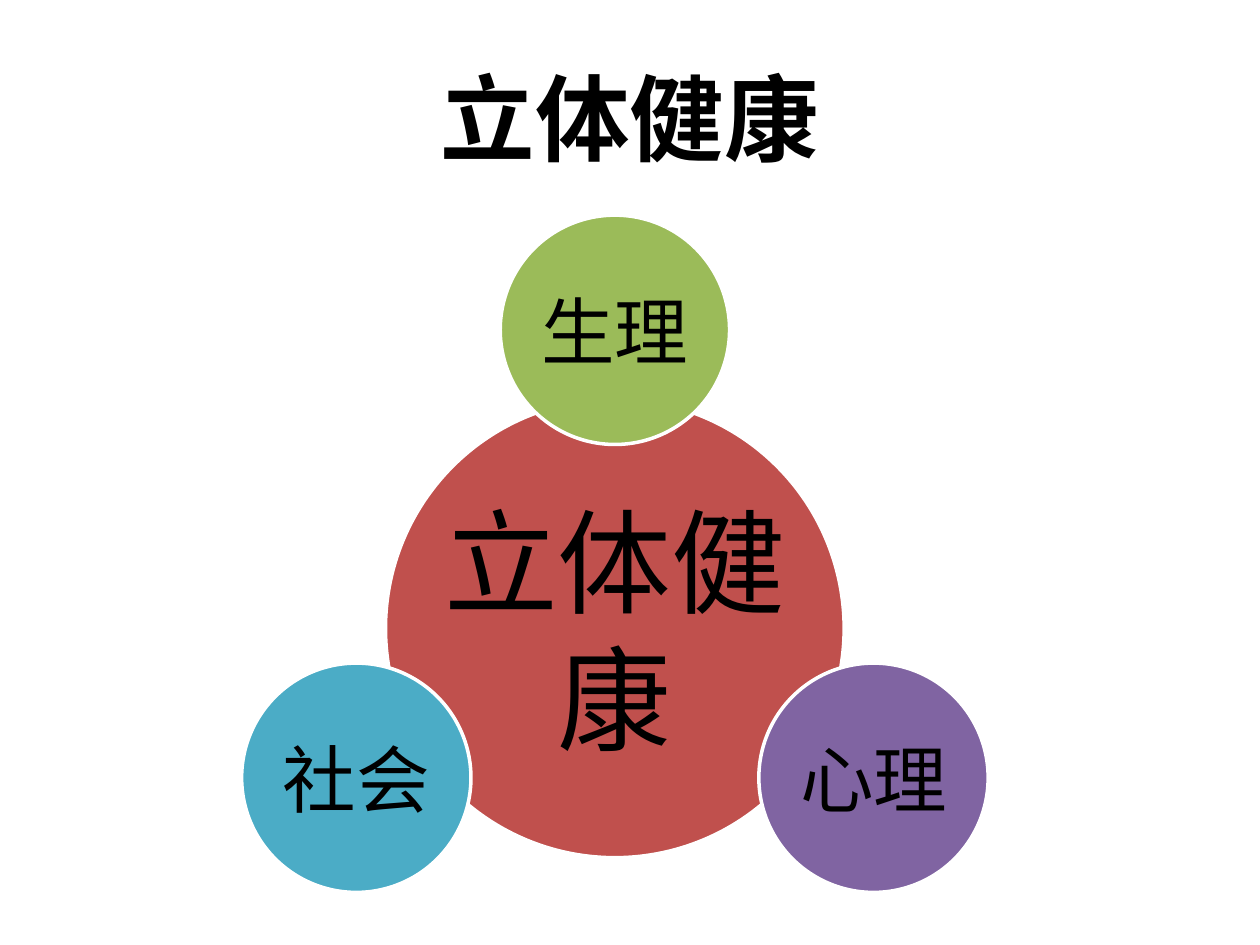
from dataclasses import dataclass
from math import cos, radians, sin

from pptx import Presentation
from pptx.dml.color import RGBColor
from pptx.enum.shapes import MSO_SHAPE as Shape
from pptx.enum.text import MSO_ANCHOR as Anchor, PP_ALIGN as Align
from pptx.slide import Slide
from pptx.util import Inches, Pt

WIDTH, HEIGHT = 10, 7.5
COLORS = {
    "text": "000000",
    "outline": "FFFFFF",
    "core": "C0504D",
    "body": "9BBB59",
    "mind": "8064A2",
    "society": "4BACC6",
}


@dataclass
class HealthSlide:
    page: Slide
    font: str = "Calibri"

    def color(self, name):
        return RGBColor.from_string(COLORS[name])

    def label(self, text, left, top, width, height, size, inset, bold=False, anchor=Anchor.MIDDLE):
        box = self.page.shapes.add_textbox(Inches(left), Inches(top), Inches(width), Inches(height))
        frame = box.text_frame
        frame.word_wrap = True
        frame.vertical_anchor = anchor
        frame.margin_left = frame.margin_right = Inches(inset)
        frame.margin_top = frame.margin_bottom = Inches(inset)
        frame.text = text
        para = frame.paragraphs[0]
        para.alignment = Align.CENTER
        span = para.runs[0]
        span.font.name = self.font
        span.font.size = Pt(size)
        span.font.bold = bold
        span.font.color.rgb = self.color("text")

    def circle(self, text, center_x, center_y, diameter, fill, size, inset):
        left, top = center_x - diameter / 2, center_y - diameter / 2
        disc = self.page.shapes.add_shape(
            Shape.OVAL, Inches(left), Inches(top), Inches(diameter), Inches(diameter)
        )
        disc.shadow.inherit = False
        disc.fill.solid()
        disc.fill.fore_color.rgb = self.color(fill)
        disc.line.color.rgb = self.color("outline")
        disc.line.width = Pt(2)
        self.label(text, left, top, diameter, diameter, size, inset)


def main():
    deck = Presentation()
    deck.slide_width, deck.slide_height = Inches(WIDTH), Inches(HEIGHT)
    slide = HealthSlide(deck.slides.add_slide(deck.slide_layouts[6]))

    center_x, center_y = WIDTH * 0.488, HEIGHT * 0.665
    core, orbit = WIDTH * 0.364, WIDTH * 0.237
    slide.circle("立体健康", center_x, center_y, core, "core", 65, 0.09)

    aspects = [("生理", "body"), ("心理", "mind"), ("社会", "society")]
    for index, (text, fill) in enumerate(aspects):
        angle = radians(index * 360 / len(aspects) - 90)
        x, y = center_x + orbit * cos(angle), center_y + orbit * sin(angle)
        slide.circle(text, x, y, core / 2, fill, 42, 0.06)

    slide.label("立体健康", 0, 0.43, WIDTH, 1.01, 54, 0.05, bold=True, anchor=Anchor.TOP)
    deck.save("out.pptx")


if __name__ == "__main__":
    main()
